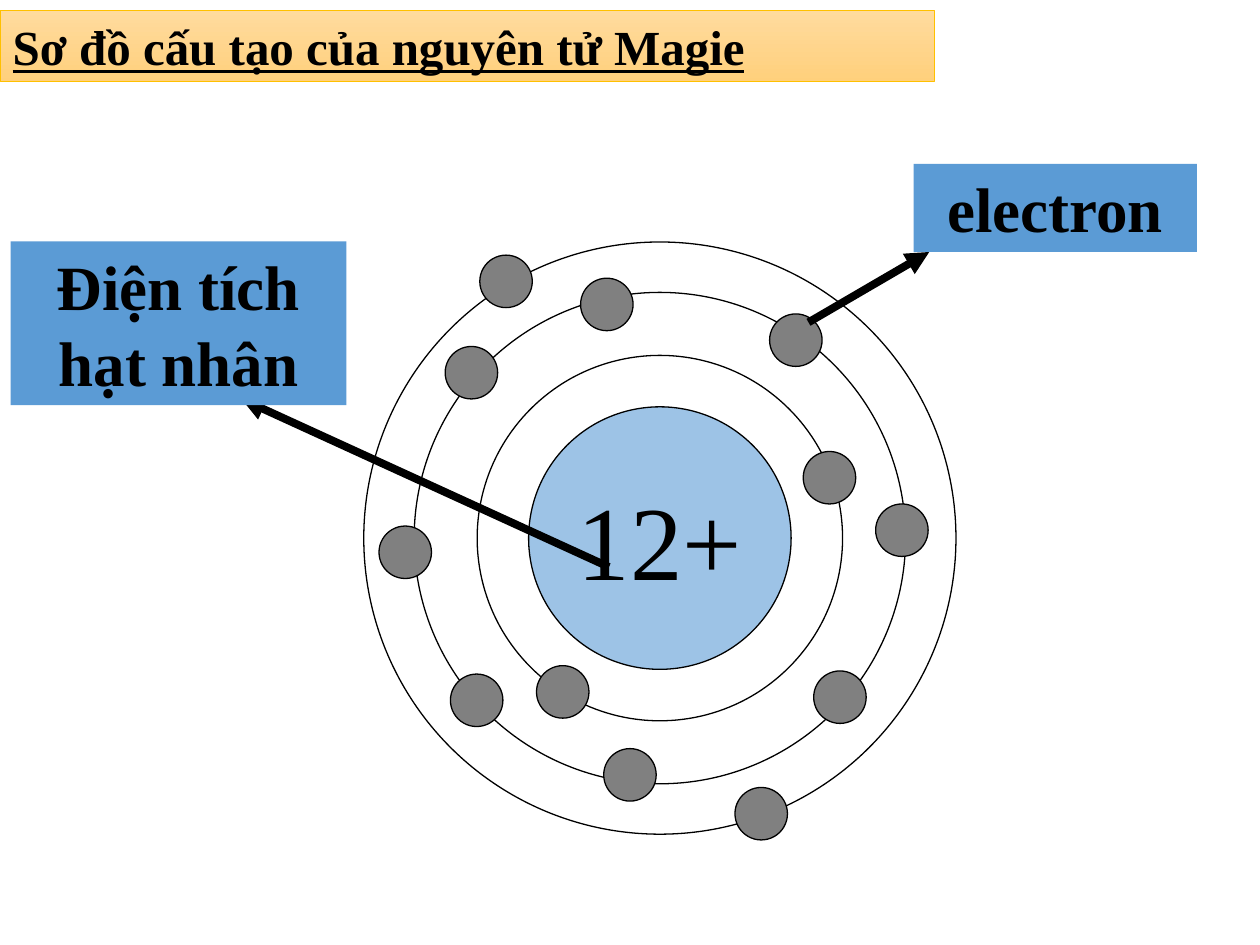
from dataclasses import dataclass

from lxml import etree
from pptx import Presentation
from pptx import util as u
from pptx.dml.color import RGBColor
from pptx.enum import shapes, text
from pptx.oxml.ns import qn

COLS, ROWS = 120, 90  # grid over the 10 x 7.5 inch slide


@dataclass(frozen=True)
class Theme:
    font: str = "Times New Roman"
    ink: str = "000000"
    nucleus: str = "9DC3E6"
    electron: str = "808080"
    label: str = "5B9BD5"
    banner: tuple = ("FFDB9E", "FFD07C")
    banner_edge: str = "FFC000"
    title_size: int = 28
    label_size: int = 36
    charge_size: int = 60
    space_before: int = 4
    outline: float = 0.75
    banner_line: float = 0.5
    arrow_line: float = 4.5


def rgb(value):
    return RGBColor.from_string(value)


class Diagram:
    def __init__(self, theme):
        self.theme = theme
        self.deck = Presentation()
        self.deck.slide_width, self.deck.slide_height = u.Inches(10), u.Inches(7.5)
        self.slide = self.deck.slides.add_slide(self.deck.slide_layouts[5])
        self.atom = self.slide.shapes.add_group_shape()

    def place(self, *cells):
        """Turn col, row, col, row ... into slide lengths."""
        steps = self.deck.slide_width / COLS, self.deck.slide_height / ROWS
        return [round(cell * steps[i % 2]) for i, cell in enumerate(cells)]

    def set_text(self, shape, words, size, align, bold=True, underline=None):
        frame = shape.text_frame
        frame.text = words
        paragraph = frame.paragraphs[0]
        paragraph.alignment = align
        font = paragraph.font
        font.name, font.size = self.theme.font, u.Pt(size)
        font.bold, font.underline = bold, underline
        font.color.rgb = rgb(self.theme.ink)
        return frame

    def set_top_text(self, shape, words, size, align, underline=None):
        frame = self.set_text(shape, words, size, align, underline=underline)
        frame.word_wrap = True
        frame.auto_size = text.MSO_AUTO_SIZE.NONE
        frame.vertical_anchor = text.MSO_ANCHOR.TOP
        frame.paragraphs[0].space_before = u.Pt(self.theme.space_before)

    def title(self, words, *box):
        banner = self.slide.shapes.title
        banner.left, banner.top, banner.width, banner.height = self.place(*box)
        banner.fill.gradient()
        banner.fill.gradient_angle = 270
        for stop, color, position in zip(banner.fill.gradient_stops, self.theme.banner, (0, 1)):
            stop.color.rgb, stop.position = rgb(color), position
        banner.line.color.rgb = rgb(self.theme.banner_edge)
        banner.line.width = u.Pt(self.theme.banner_line)
        self.set_top_text(banner, words, self.theme.title_size, text.PP_ALIGN.LEFT,
                          underline=True)

    def circle(self, center, diameter, fill=None):
        col, row = (c - diameter / 2 for c in center)
        circle = self.atom.shapes.add_shape(
            shapes.MSO_SHAPE.OVAL, *self.place(col, row, diameter, diameter))
        circle.shadow.inherit = False
        if fill:
            circle.fill.solid()
            circle.fill.fore_color.rgb = rgb(fill)
        else:
            circle.fill.background()
        circle.line.color.rgb = rgb(self.theme.ink)
        circle.line.width = u.Pt(self.theme.outline)
        return circle

    def nucleus(self, charge, center, diameter):
        core = self.circle(center, diameter, self.theme.nucleus)
        frame = self.set_text(core, charge, self.theme.charge_size, text.PP_ALIGN.CENTER,
                              bold=False)
        frame.word_wrap = False
        frame.vertical_anchor = text.MSO_ANCHOR.MIDDLE

    def label(self, words, *box):
        label = self.slide.shapes.add_shape(shapes.MSO_SHAPE.RECTANGLE, *self.place(*box))
        label.shadow.inherit = False
        label.fill.solid()
        label.fill.fore_color.rgb = rgb(self.theme.label)
        label.line.fill.background()
        self.set_top_text(label, words, self.theme.label_size, text.PP_ALIGN.CENTER)

    def arrow(self, *ends):
        arrow = self.slide.shapes.add_connector(
            shapes.MSO_CONNECTOR.STRAIGHT, *self.place(*ends))
        arrow.line.color.rgb = rgb(self.theme.ink)
        arrow.line.width = u.Pt(self.theme.arrow_line)
        etree.SubElement(arrow.line._get_or_add_ln(), qn("a:tailEnd"), type="triangle")
        etree.SubElement(arrow._element.spPr, qn("a:effectLst"))


def main():
    theme = Theme()
    diagram = Diagram(theme)
    diagram.title("Sơ đồ cấu tạo của nguyên tử Magie", 0, 1, 89, 6.8)

    # Nucleus and electron shells share one centre
    center = (62.85, 51.25)
    diagram.nucleus("12+", center, 25)
    for shell in (56.4, 34.8, 46.8):
        diagram.circle(center, shell)

    # Electrons, by shell from the inside out
    electrons = (
        ((53.6, 65.9), (79, 45.5)),
        ((57.8, 29), (85.9, 50.5), (75.8, 32.4), (44.9, 35.5),
         (60, 73.8), (45.4, 66.7), (80, 66.4), (38.6, 52.6)),
        ((48.2, 26.8), (72.5, 77.5)),
    )
    for shell in electrons:
        for spot in shell:
            diagram.circle(spot, 5, theme.electron)

    # Labels with their arrows
    diagram.arrow(77, 30.7, 88.5, 24)
    diagram.label("electron", 87, 15.6, 27, 8.4)
    diagram.arrow(58, 54, 23, 38)
    diagram.label("Điện tích hạt nhân", 1, 23, 32, 15.6)

    diagram.deck.save("out.pptx")


if __name__ == "__main__":
    main()
